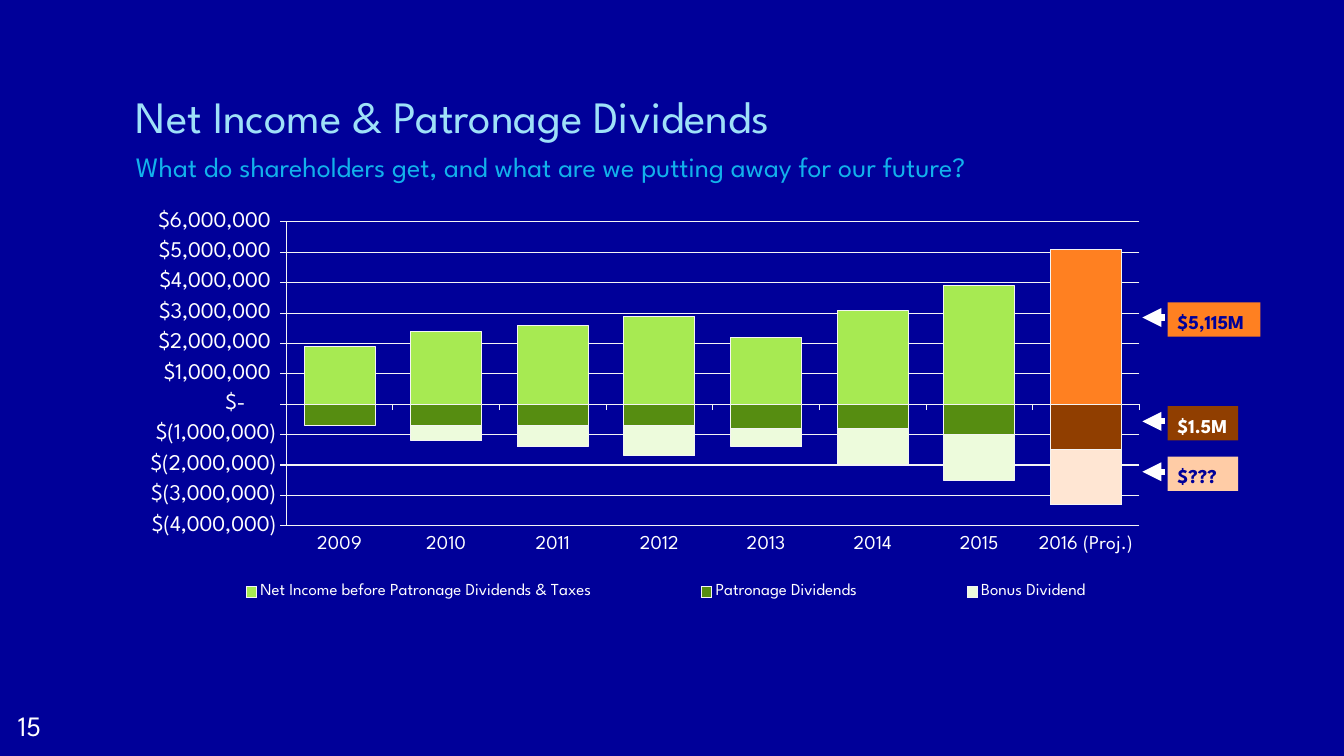
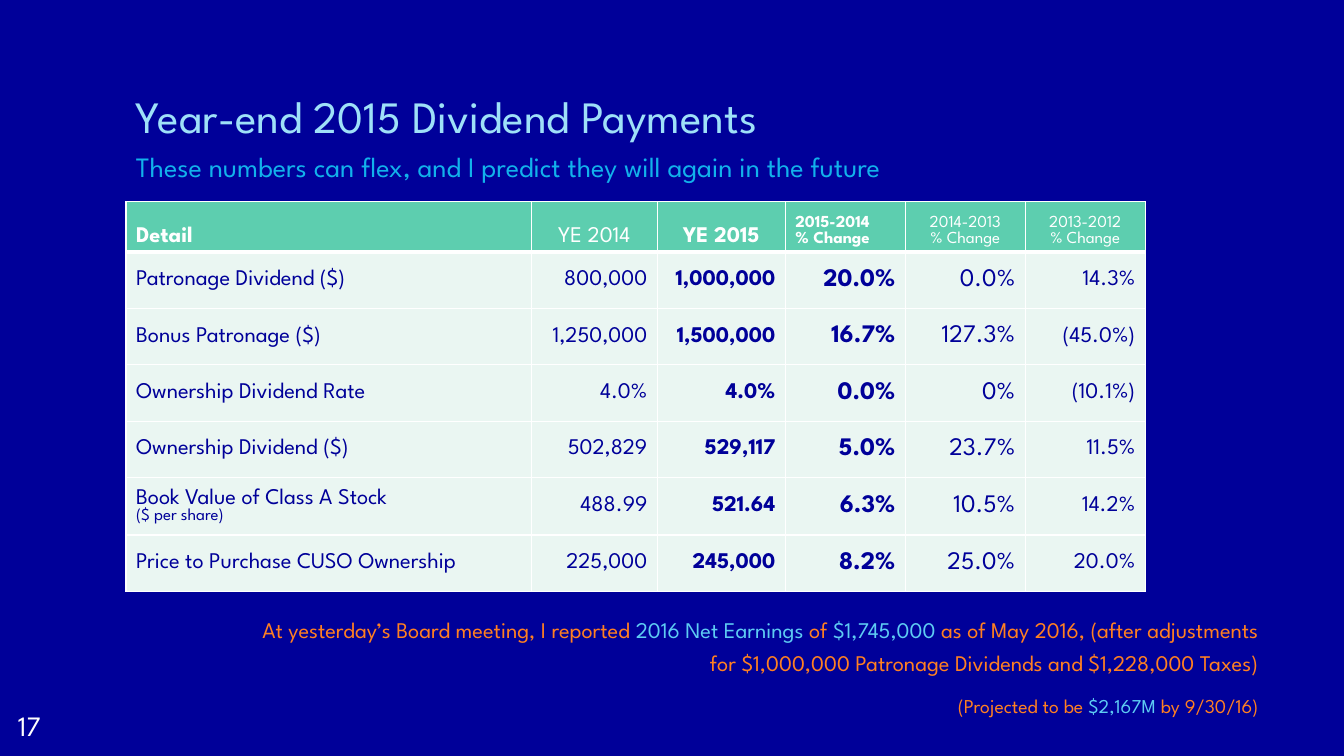
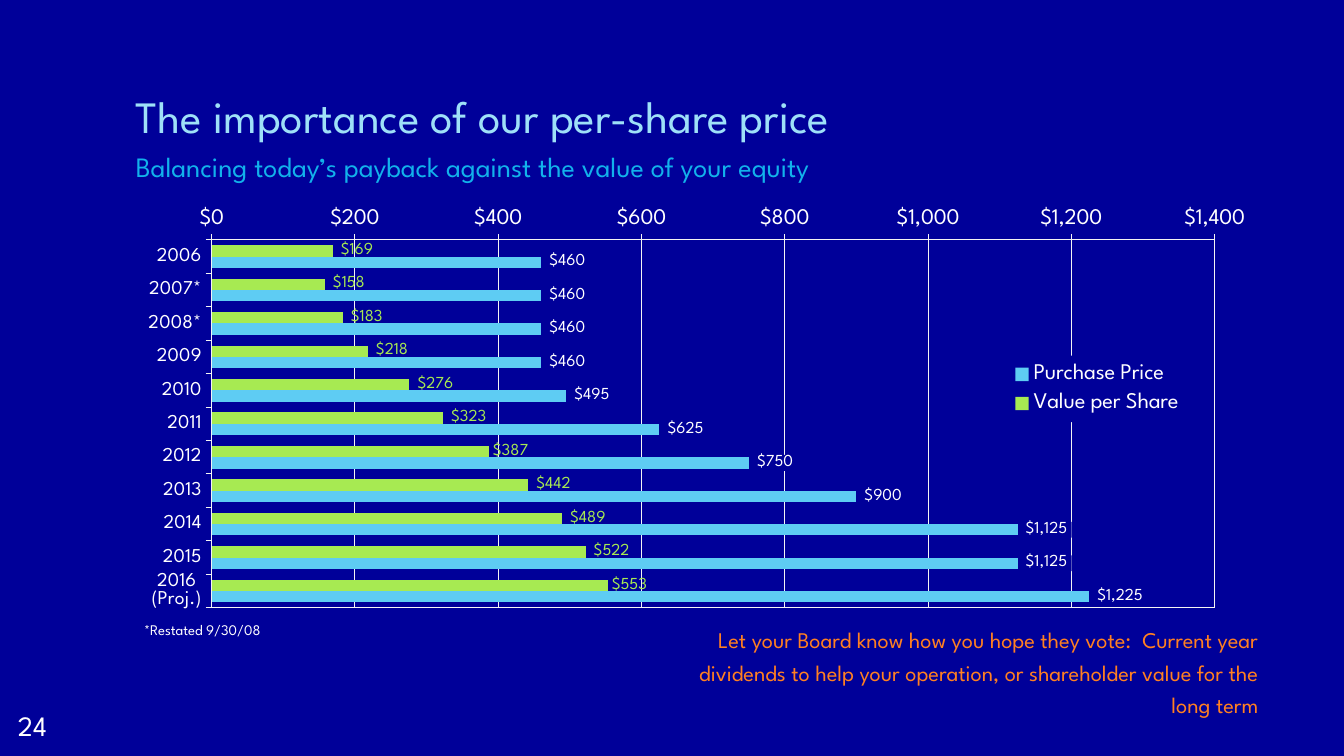
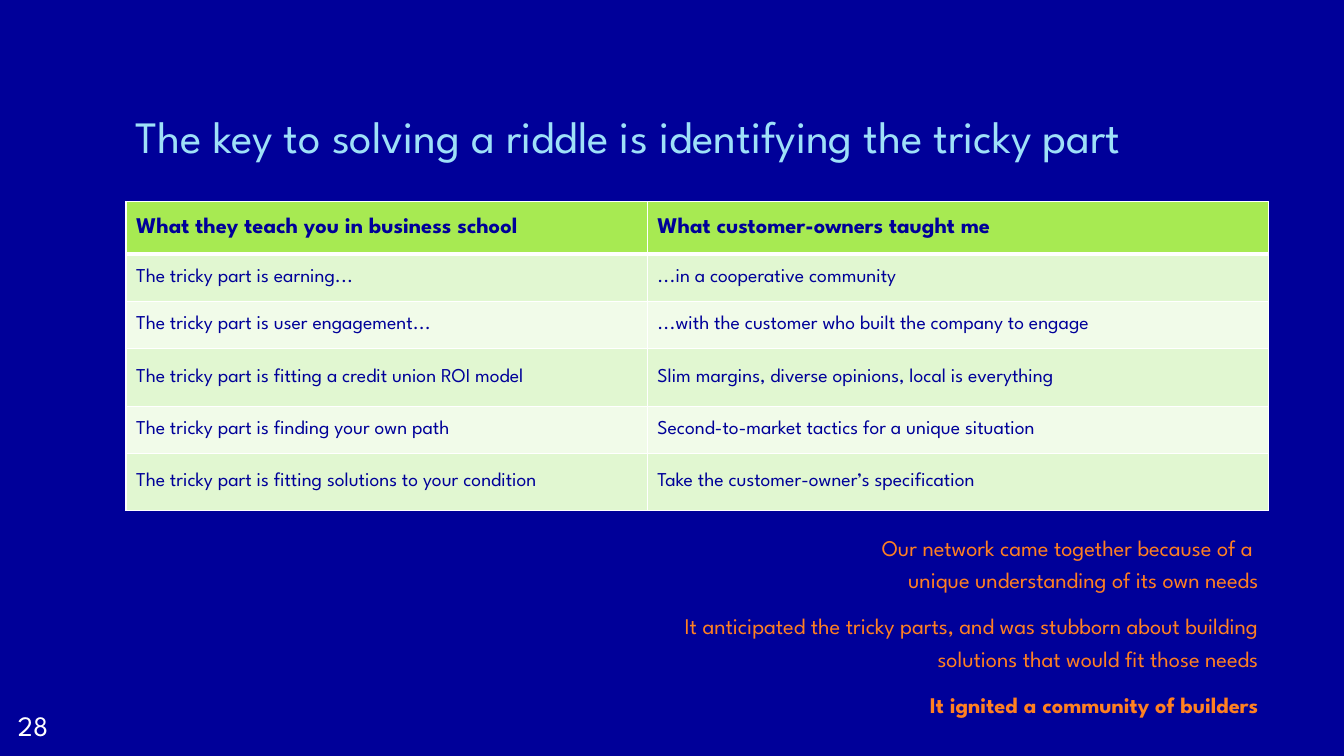
import copy

import lxml.etree
import pptx
import pptx.chart.data
import pptx.dml.color
import pptx.enum.chart
import pptx.enum.shapes
import pptx.enum.text
import pptx.oxml
import pptx.oxml.ns
import pptx.util

Inches = pptx.util.Inches
Pt = pptx.util.Pt
qn = pptx.oxml.ns.qn
ALIGN = pptx.enum.text.PP_ALIGN
ANCHOR = pptx.enum.text.MSO_ANCHOR
CHART = pptx.enum.chart

# Palette
NAVY, WHITE, GRID = "000099", "FFFFFF", "F4F4F4"
TITLE, SUBTITLE, SKY = "9EE0F8", "12B2EB", "5ECCF3"
ORANGE, BROWN, PEACH, PALE_PEACH = "FF8021", "903E00", "FFCCA6", "FFE6D3"
LIME, GREEN, PALE_LIME = "A7EA52", "568D11", "EDFBDC"

FONT = "League Spartan"
LEFT = 1.25
RIGHT = 12.58
ACCOUNTING = '_("$"* #,##0_);_("$"* \\(#,##0\\);_("$"* "-"??_);_(@_)'
DOLLARS = "\\$#,##0"


def rgb(hex_color):
    return pptx.dml.color.RGBColor.from_string(hex_color)


def apply(target, values):
    """Set attributes, which may be dotted, from a dict."""
    for name, value in values.items():
        owner = target
        *parents, last = name.split(".")
        for parent in parents:
            owner = getattr(owner, parent)
        setattr(owner, last, value)


def style_font(font, size, color=WHITE, bold=False):
    apply(font, {"name": FONT, "size": Pt(size), "bold": bold})
    font.color.rgb = rgb(color)


def style_line(line, color, width=0.75):
    line.color.rgb = rgb(color)
    line.width = Pt(width)


def chart_xml(body):
    """Build a chart fragment with the usual namespaces."""
    tag, rest = body.split(">", 1)
    return pptx.oxml.parse_xml(f"{tag} {pptx.oxml.ns.nsdecls('c', 'a')}>{rest}")


def chart_fill(color):
    return chart_xml(f'<c:spPr><a:solidFill><a:srgbClr val="{color}"/></a:solidFill></c:spPr>')


def chart_layout(x, y, width, height, inner=False):
    values = {"xMode": "edge", "yMode": "edge", "x": x, "y": y, "w": width, "h": height}
    if inner:
        values = {"layoutTarget": "inner", **values}
    items = "".join(f'<c:{name} val="{value}"/>' for name, value in values.items())
    return chart_xml(f"<c:layout><c:manualLayout>{items}</c:manualLayout></c:layout>")


class Deck:
    """Holds the shared style and the current slide."""

    def __init__(self):
        self.presentation = pptx.Presentation()
        apply(self.presentation, {"slide_width": Inches(13.33), "slide_height": Inches(7.5)})
        self.slide = None

    def add_slide(self, number, title, subtitle=None):
        self.slide = self.presentation.slides.add_slide(self.presentation.slide_layouts[6])
        fill = self.slide.background.fill
        fill.solid()
        fill.fore_color.rgb = rgb(NAVY)
        runs = [(title, {})]
        if subtitle:
            runs = [(title + "\n", {}), (subtitle, {"size": 20, "color": SUBTITLE})]
        self.text((LEFT, 0.68, 11.34, 1.23), [runs], ANCHOR.MIDDLE, size=32, color=TITLE)
        self.text((0.08, 7, 0.85, 0.4), [str(number)], ANCHOR.MIDDLE, spacing=1, size=20)

    def fill_text(self, frame, paragraphs, align=ALIGN.LEFT, spacing=1.2, before=0, **base):
        """Fill a frame; a paragraph is a string or a list of (text, font changes)."""
        for index, runs in enumerate(paragraphs):
            paragraph = frame.add_paragraph() if index else frame.paragraphs[0]
            apply(paragraph, {"alignment": align, "line_spacing": spacing,
                              "space_before": Pt(before if index else 0)})
            for text, changes in [(runs, {})] if isinstance(runs, str) else runs:
                for line_number, line in enumerate(text.split("\n")):
                    if line_number:
                        paragraph.add_line_break()
                        properties = copy.deepcopy(run.font._element)
                        paragraph._p[-1].append(properties)
                    if line:
                        run = paragraph.add_run()
                        run.text = line
                        style_font(run.font, **{**base, **changes})

    def text(self, box, paragraphs, anchor=ANCHOR.TOP, **style):
        shape = self.slide.shapes.add_textbox(*map(Inches, box))
        apply(shape.text_frame, {"word_wrap": True, "vertical_anchor": anchor})
        self.fill_text(shape.text_frame, paragraphs, **style)

    def closing_note(self, left, paragraphs):
        self.text((left, 6.25, RIGHT - left, 0.92), paragraphs, ANCHOR.BOTTOM,
                  align=ALIGN.RIGHT, before=10, size=16, color=ORANGE)

    def callout(self, top, width, text, fill, color):
        """A label box with an arrow pointing left from it."""
        shape = self.slide.shapes.add_shape(pptx.enum.shapes.MSO_SHAPE.RECTANGLE,
                                            *map(Inches, (11.58, top, width, 0.34)))
        shape.shadow.inherit = False
        shape.fill.solid()
        shape.fill.fore_color.rgb = rgb(fill)
        shape.line.fill.background()
        apply(shape.text_frame, {"word_wrap": True, "margin_right": 0,
                                 "vertical_anchor": ANCHOR.MIDDLE})
        self.fill_text(shape.text_frame, [text], size=14, color=color, bold=True)

        arrow_y = top + 0.15
        arrow = self.slide.shapes.add_connector(
            pptx.enum.shapes.MSO_CONNECTOR.STRAIGHT,
            *map(Inches, (11.55, arrow_y, 11.33, arrow_y)))
        style_line(arrow.line, WHITE, 4.5)
        lxml.etree.SubElement(arrow.line._get_or_add_ln(), qn("a:tailEnd"), type="triangle")
        lxml.etree.SubElement(arrow._element.spPr, qn("a:effectLst"))

    def table(self, widths, heights, rows, fills, cell_style):
        """cell_style(row, column) gives the anchor and the text style."""
        size = (LEFT, 2, sum(widths), sum(heights))
        table = self.slide.shapes.add_table(len(rows), len(widths), *map(Inches, size)).table
        for column, width in zip(table.columns, widths):
            column.width = Inches(width)
        for row, height in zip(table.rows, heights):
            row.height = Inches(height)
        for row, texts in enumerate(rows):
            for column, content in enumerate(texts):
                cell = table.cell(row, column)
                anchor, style = cell_style(row, column)
                cell.vertical_anchor = anchor
                self.fill_text(cell.text_frame, [content], spacing=1, **style)
                self.borders(cell, {"L": 1, "R": 1, "T": 3 if row == 1 else 1,
                                    "B": 1 if row else 3})
                cell.fill.solid()
                cell.fill.fore_color.rgb = rgb(fills[row])

    def borders(self, cell, widths):
        properties = cell._tc.get_or_add_tcPr()
        for side, width in widths.items():
            line = lxml.etree.SubElement(properties, qn(f"a:ln{side}"), w=str(Pt(width)))
            fill = lxml.etree.SubElement(line, qn("a:solidFill"))
            lxml.etree.SubElement(fill, qn("a:srgbClr"), val=WHITE)

    def chart(self, kind, box, categories, series, plot, gap, overlap, scale, number_format):
        """series holds (name, values, color); scale is minimum, maximum, unit."""
        data = pptx.chart.data.CategoryChartData()
        data.categories = categories
        for name, values, _ in series:
            data.add_series(name, values)
        chart = self.slide.shapes.add_chart(kind, *map(Inches, box), data).chart
        chart.has_title = False
        style_font(chart.font, 18)
        apply(chart.plots[0], {"gap_width": gap, "overlap": overlap,
                               "vary_by_categories": False})
        for item, (_, _, color) in zip(chart.plots[0].series, series):
            item.invert_if_negative = False
            item.format.fill.solid()
            item.format.fill.fore_color.rgb = rgb(color)

        # Axes
        minimum, maximum, unit = scale
        apply(chart.value_axis, {"minimum_scale": minimum, "maximum_scale": maximum,
                                 "major_unit": unit, "has_major_gridlines": True,
                                 "tick_labels.number_format": number_format,
                                 "tick_labels.number_format_is_linked": False})
        style_line(chart.value_axis.major_gridlines.format.line, GRID)
        for axis, size in ((chart.category_axis, 14), (chart.value_axis, 16)):
            axis.major_tick_mark = CHART.XL_TICK_MARK.OUTSIDE
            style_line(axis.format.line, GRID)
            style_font(axis.tick_labels.font, size)

        # Plot position
        area = chart._chartSpace.chart.plotArea
        for old in area.findall(qn("c:layout")):
            area.remove(old)
        area.insert(0, chart_layout(*plot, inner=True))
        return chart

    def legend(self, chart, position, overlay, size, layout):
        chart.has_legend = True
        apply(chart.legend, {"position": position, "include_in_layout": overlay})
        style_font(chart.legend.font, size)
        element = chart.legend._element
        for old in element.findall(qn("c:layout")):
            element.remove(old)
        element.find(qn("c:legendPos")).addnext(chart_layout(*layout))
        if overlay:
            element.find(qn("c:txPr")).addprevious(chart_fill(NAVY))

    def value_labels(self, series, color, fill=None, plain_points=()):
        """Labels at the bar ends; plain_points use the unpadded format."""
        labels = series.data_labels
        apply(labels, {"show_value": True, "number_format": ACCOUNTING,
                       "number_format_is_linked": False,
                       "position": CHART.XL_LABEL_POSITION.OUTSIDE_END})
        style_font(labels.font, 12, color)
        if fill:
            labels._element.find(qn("c:txPr")).addprevious(chart_fill(fill))
        for place, index in enumerate(plain_points):
            label = chart_xml(
                f'<c:dLbl><c:idx val="{index}"/>'
                f'<c:numFmt formatCode="{DOLLARS}" sourceLinked="0"/>'
                '<c:dLblPos val="outEnd"/><c:showLegendKey val="0"/><c:showVal val="1"/>'
                '<c:showCatName val="0"/><c:showSerName val="0"/>'
                '<c:showPercent val="0"/><c:showBubbleSize val="0"/></c:dLbl>')
            text = copy.deepcopy(labels._element.find(qn("c:txPr")))
            label.find(qn("c:numFmt")).addnext(text)
            labels._element.insert(place, label)


def income_slide(deck):
    deck.add_slide(15, "Net Income & Patronage Dividends",
                   "What do shareholders get, and what are we putting away for our future?")
    deck.callout(3, 0.92, "$5,115M", ORANGE, NAVY)
    deck.callout(4.03, 0.7, "$1.5M", BROWN, WHITE)
    deck.callout(4.53, 0.7, "$???", PEACH, NAVY)

    years = [str(year) for year in range(2009, 2016)] + ["2016 (Proj.)"]
    series = [
        ("Net Income before Patronage Dividends & Taxes",
         [1900000, 2400000, 2600000, 2900000, 2200000, 3100000, 3900000, 5100000], LIME),
        ("Patronage Dividends",
         [-700000, -700000, -700000, -700000, -800000, -800000, -1000000, -1500000], GREEN),
        ("Bonus Dividend",
         [None, -500000, -700000, -1000000, -600000, -1200000, -1500000, -1800000], PALE_LIME),
    ]
    chart = deck.chart(CHART.XL_CHART_TYPE.COLUMN_STACKED, (LEFT, 1.93, 10.67, 4.13), years,
                       series, (0.149, 0.066, 0.793, 0.73), 50, 100,
                       (-4000000, 6000000, 1000000), ACCOUNTING)
    chart.category_axis.tick_label_position = CHART.XL_TICK_LABEL_POSITION.LOW
    # The projected year has its own colours
    for item, color in zip(chart.plots[0].series, (ORANGE, BROWN, PALE_PEACH)):
        projected = item.points[len(years) - 1].format
        projected.fill.solid()
        projected.fill.fore_color.rgb = rgb(color)
        for shape_format in (item.format, projected):
            style_line(shape_format.line, GRID)
    deck.legend(chart, CHART.XL_LEGEND_POSITION.BOTTOM, False, 12, (0.015, 0.92, 0.974, 0.07))


def dividend_slide(deck):
    deck.add_slide(17, "Year-end 2015 Dividend Payments",
                   "These numbers can flex, and I predict they will again in the future")
    rows = [
        ["Detail", "YE 2014", "YE 2015", "2015-2014\n% Change", "2014-2013\n% Change",
         "2013-2012\n% Change"],
        ["Patronage Dividend ($)", "800,000", "1,000,000", "20.0%", "0.0%", "14.3%"],
        ["Bonus Patronage ($)", "1,250,000", "1,500,000", "16.7%", "127.3%", "(45.0%)"],
        ["Ownership Dividend Rate", "4.0%", "4.0%", "0.0%", "0%", "(10.1%)"],
        ["Ownership Dividend ($)", "502,829", "529,117", "5.0%", "23.7%", "11.5%"],
        [[("Book Value of Class A Stock\n", {}), ("($ per share)", {"size": 12})],
         "488.99", "521.64", "6.3%", "10.5%", "14.2%"],
        ["Price to Purchase CUSO Ownership", "225,000", "245,000", "8.2%", "25.0%", "20.0%"],
    ]

    def cell_style(row, column):
        if row == 0:
            return ANCHOR.BOTTOM, {
                "align": ALIGN.LEFT if column in (0, 3) else ALIGN.CENTER,
                "size": 16 if column < 3 else 12, "bold": column in (0, 2, 3)}
        return ANCHOR.MIDDLE, {
            "align": ALIGN.RIGHT if column else ALIGN.LEFT, "color": NAVY,
            "size": 18 if column in (3, 4) else 16, "bold": column in (2, 3)}

    deck.table([4.02, 1.25, 1.27] + [1.19] * 3, [0.49] + [0.56] * 6, rows,
               ["5DCEAF"] + ["EAF6F2"] * 6, cell_style)
    sky = {"color": SKY}
    small = {"size": 14}
    deck.closing_note(2.5, [
        [("At yesterday’s Board meeting, I reported ", {}), ("2016 Net Earnings ", sky),
         ("of ", {}), ("$1,745,000 ", sky),
         ("as of May 2016, (after adjustments for $1,000,000 Patronage Dividends "
          "and $1,228,000 Taxes)", {})],
        [("(Projected to be ", small), ("$2,167M", {**small, **sky}), (" by 9/30/16)", small)],
    ])


def share_price_slide(deck):
    deck.add_slide(24, "The importance of our per-share price",
                   "Balancing today’s payback against the value of your equity")
    deck.closing_note(6.5, ["Let your Board know how you hope they vote:  Current year dividends "
                            "to help your operation, or shareholder value for the long term"])
    deck.text((1.33, 6.08, 3.08, 0.29), ["*Restated 9/30/08"], size=10.5)

    years = ["2006", "2007*", "2008*", *map(str, range(2009, 2016)), "2016 (Proj.)"]
    series = [
        ("Value per Share", [169, 158, 183, 218, 276, 323, 387, 442, 489, 522, 553], LIME),
        ("Purchase Price", [460, 460, 460, 460, 495, 625, 750, 900, 1125, 1125, 1225], SKY),
    ]
    chart = deck.chart(CHART.XL_CHART_TYPE.BAR_CLUSTERED, (LEFT, 2, 11.33, 4.13), years, series,
                       (0.075, 0.092, 0.878, 0.884), 95, 0, (0, 1400, 200), DOLLARS)
    chart.category_axis.reverse_order = True
    value, price = chart.plots[0].series
    deck.value_labels(value, LIME, plain_points=(6, 10))
    deck.value_labels(price, WHITE, fill=NAVY)
    deck.legend(chart, CHART.XL_LEGEND_POSITION.RIGHT, True, 16, (0.77, 0.37, 0.16, 0.16))
    # Frame around the plot
    chart._chartSpace.chart.plotArea.append(chart_xml(
        f'<c:spPr><a:noFill/><a:ln w="{Pt(0.75)}"><a:solidFill><a:srgbClr val="{GRID}"/>'
        "</a:solidFill></a:ln></c:spPr>"))


def riddle_slide(deck):
    deck.add_slide(28, "The key to solving a riddle is identifying the tricky part")
    rows = [
        ["What they teach you in business school", "What customer-owners taught me"],
        ["The tricky part is earning...", "...in a cooperative community"],
        ["The tricky part is user engagement...",
         "...with the customer who built the company to engage"],
        ["The tricky part is fitting a credit union ROI model",
         "Slim margins, diverse opinions, local is everything"],
        ["The tricky part is finding your own path",
         "Second-to-market tactics for a unique situation"],
        ["The tricky part is fitting solutions to your condition",
         "Take the customer-owner’s specification"],
    ]

    def cell_style(row, column):
        return ANCHOR.MIDDLE, {"size": 14 if row else 16, "bold": row == 0, "color": NAVY}

    odd, even = "E1F7D1", "F1FBE9"
    deck.table([5.17, 6.16], [0.52, 0.47, 0.47, 0.57, 0.47, 0.57], rows,
               [LIME, odd, even, odd, even, odd], cell_style)
    deck.closing_note(6.69, [
        "Our network came together because of a \nunique understanding of its own needs",
        "It anticipated the tricky parts, and was stubborn about building solutions "
        "that would fit those needs",
        [("It ignited a community of builders", {"bold": True})],
    ])


def main():
    deck = Deck()
    for build in (income_slide, dividend_slide, share_price_slide, riddle_slide):
        build(deck)
    deck.presentation.save("out.pptx")


if __name__ == "__main__":
    main()
